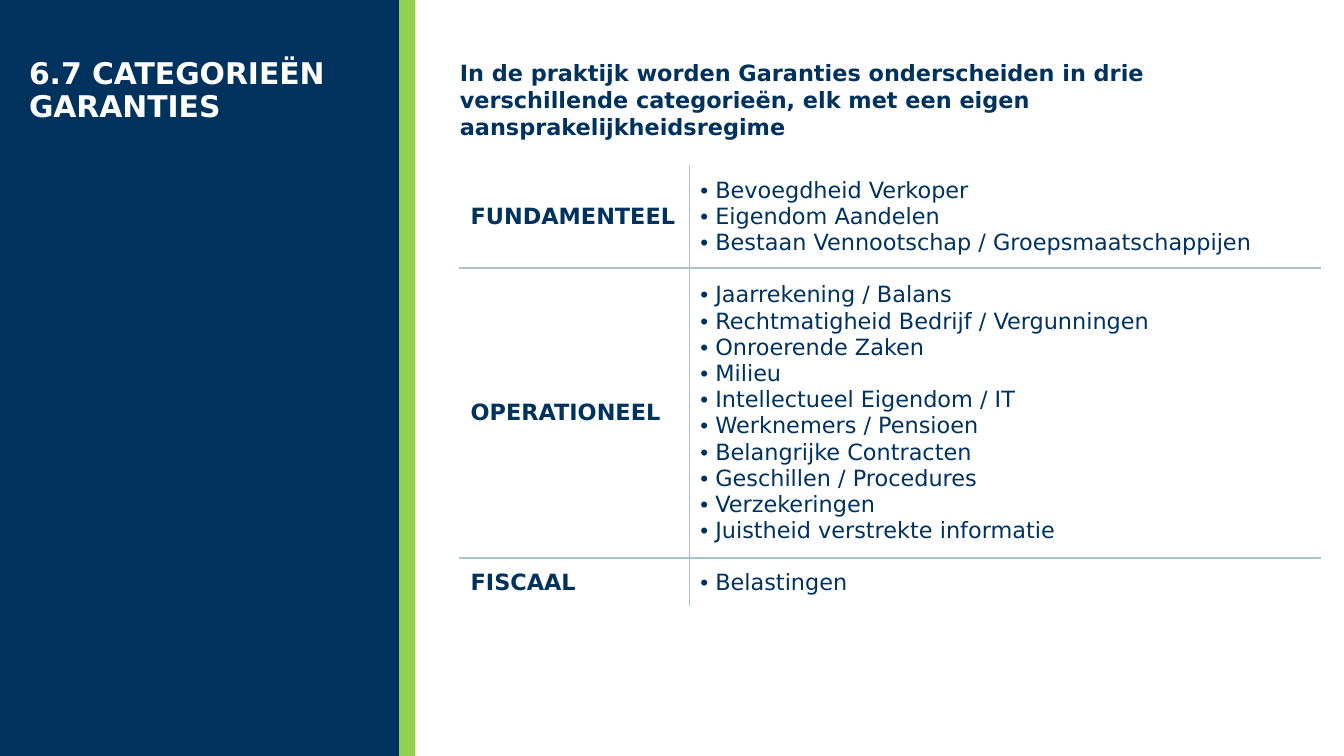
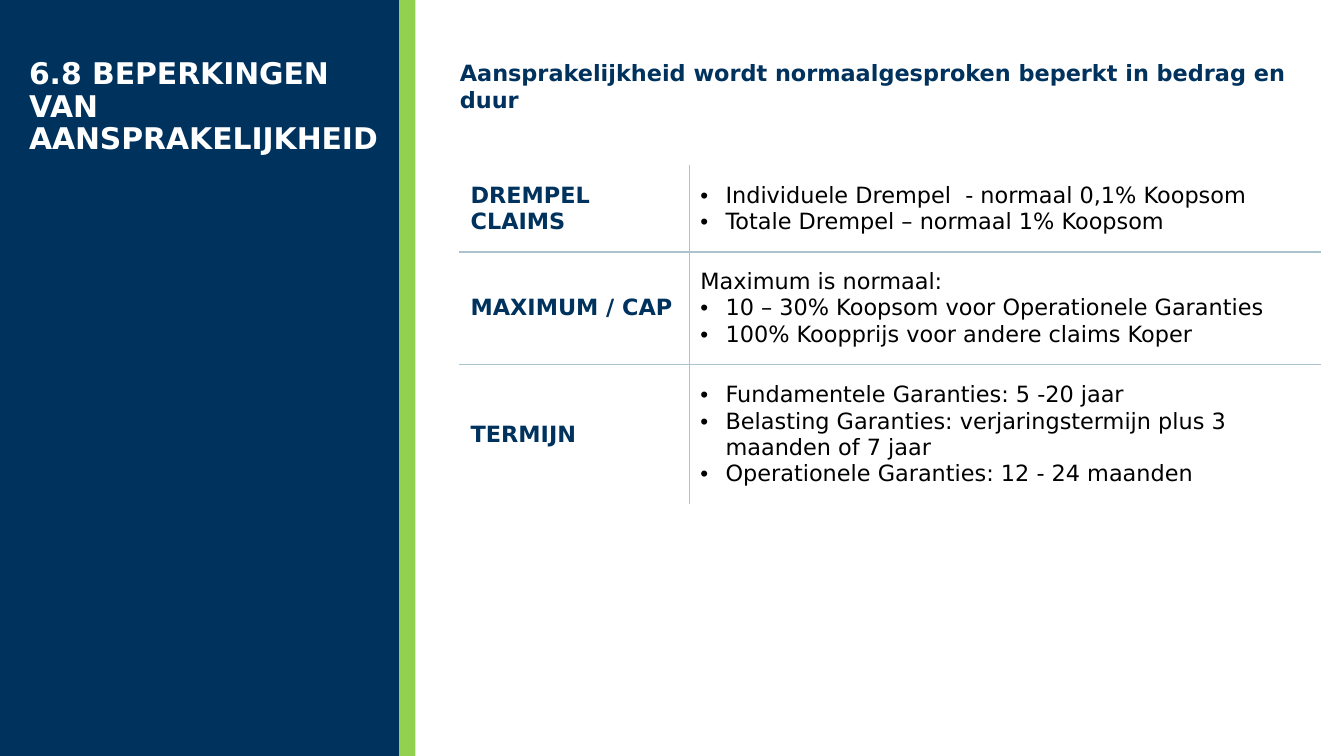
from lxml.etree import SubElement
from pptx import Presentation
from pptx.dml.color import RGBColor
from pptx.enum.shapes import MSO_SHAPE
from pptx.enum.text import MSO_ANCHOR
from pptx.oxml.ns import qn
from pptx.util import Pt

COLORS = {"navy": "00325E", "green": "92D050", "line": "ABC3CE",
          "white": "FFFFFF", "black": "000000"}
BANDS = [(0, 214, "navy"), (214, 8.6, "green")]
TITLE = {"size": Pt(16), "bold": True, "name": "DejaVu Sans"}
HEADING = {"size": Pt(12), "bold": True, "name": "DejaVu Sans"}
BODY = {"size": Pt(12), "bold": False, "name": "DejaVu Sans"}
CONTENT_LEFT, CONTENT_TOP, CONTENT_WIDTH = 246.4, 31.7, 460.8
TABLE_TOP = 88.8
COLUMN_WIDTHS = [123.1, 337.7]
CELL_LEFT = 5.76

SLIDES = [
    {"title": "6.7 CATEGORIEËN GARANTIES",
     "title_height": 34.6,
     "intro": "In de praktijk worden Garanties onderscheiden in drie verschillende "
              "categorieën, elk met een eigen aansprakelijkheidsregime",
     "color": "navy", "indent": 8, "padding": 5.76,
     "row_heights": [53.5, 151.6, 25.6],
     "rows": [
         ("FUNDAMENTEEL", None,
          ["Bevoegdheid Verkoper", "Eigendom Aandelen",
           "Bestaan Vennootschap / Groepsmaatschappijen"]),
         ("OPERATIONEEL", None,
          ["Jaarrekening / Balans", "Rechtmatigheid Bedrijf / Vergunningen",
           "Onroerende Zaken", "Milieu", "Intellectueel Eigendom / IT",
           "Werknemers / Pensioen", "Belangrijke Contracten",
           "Geschillen / Procedures", "Verzekeringen",
           "Juistheid verstrekte informatie"]),
         ("FISCAAL", None, ["Belastingen"])]},
    {"title": "6.8 BEPERKINGEN VAN AANSPRAKELIJKHEID",
     "title_height": 52.6,
     "intro": "Aansprakelijkheid wordt normaalgesproken beperkt in bedrag en duur",
     "color": "black", "indent": 13.5, "padding": 8.64,
     "row_heights": [45, 59.4, 73],
     "rows": [
         ("DREMPEL CLAIMS", None,
          ["Individuele Drempel  - normaal 0,1% Koopsom",
           "Totale Drempel – normaal 1% Koopsom"]),
         ("MAXIMUM / CAP", "Maximum is normaal:",
          ["10 – 30% Koopsom voor Operationele Garanties",
           "100% Koopprijs voor andere claims Koper"]),
         ("TERMIJN", None,
          ["Fundamentele Garanties: 5 -20 jaar",
           "Belasting Garanties: verjaringstermijn plus 3 maanden of 7 jaar",
           "Operationele Garanties: 12 - 24 maanden"])]},
]


def write(tf, text, style, color, indent=0):
    """Fill the empty first paragraph or add one; an indent makes it a bullet."""
    p = tf.paragraphs[0] if not tf.text else tf.add_paragraph()
    if indent:
        pPr = p._p.get_or_add_pPr()
        pPr.set("marL", str(Pt(indent)))
        pPr.set("indent", str(-Pt(indent)))
        SubElement(pPr, qn("a:buFont"), typeface="Arial")
        SubElement(pPr, qn("a:buChar"), char="•")
    r = p.add_run()
    r.text = text
    for key, value in style.items():
        setattr(r.font, key, value)
    r.font.color.rgb = RGBColor.from_string(COLORS[color])
    return p


def format_cell(cell, sides, padding):
    """Draw lines on the given sides, clear the fill and set the margins."""
    tcPr = cell._tc.get_or_add_tcPr()
    for side in sides:
        ln = SubElement(tcPr, qn("a:ln" + side), w=str(Pt(1)))
        fill = SubElement(ln, qn("a:solidFill"))
        SubElement(fill, qn("a:srgbClr"), val=COLORS["line"])
    cell.fill.background()
    cell.vertical_anchor = MSO_ANCHOR.MIDDLE
    cell.margin_left, cell.margin_right = Pt(CELL_LEFT), 0
    cell.margin_top = cell.margin_bottom = Pt(padding)


prs = Presentation()
prs.slide_width, prs.slide_height = Pt(720), Pt(405)

for content in SLIDES:
    s = prs.slides.add_slide(prs.slide_layouts[6])

    for left, width, color in BANDS:
        sp = s.shapes.add_shape(MSO_SHAPE.RECTANGLE, Pt(left), 0, Pt(width), prs.slide_height)
        sp.shadow.inherit = False
        sp.fill.solid()
        sp.fill.fore_color.rgb = RGBColor.from_string(COLORS[color])
        sp.line.fill.background()

    texts = [
        (CONTENT_LEFT, CONTENT_WIDTH, 350, content["intro"], HEADING, "navy", 1),
        (15.6, 199.4, content["title_height"], content["title"], TITLE, "white", 0.9)]
    for left, width, height, text, style, color, spacing in texts:
        sp = s.shapes.add_textbox(Pt(left), Pt(CONTENT_TOP), Pt(width), Pt(height))
        tf = sp.text_frame
        tf.word_wrap = True
        tf.margin_left = tf.margin_right = tf.margin_top = tf.margin_bottom = 0
        write(tf, text, style, color).line_spacing = spacing

    rows, heights = content["rows"], content["row_heights"]
    table = s.shapes.add_table(len(rows), 2, Pt(CONTENT_LEFT), Pt(TABLE_TOP),
                               Pt(CONTENT_WIDTH), Pt(sum(heights))).table
    table.first_row = table.horz_banding = False
    for column, width in zip(table.columns, COLUMN_WIDTHS):
        column.width = Pt(width)
    for i, (label, lead, bullets) in enumerate(rows):
        table.rows[i].height = Pt(heights[i])
        row_sides = ["T"] * (i > 0) + ["B"] * (i < len(rows) - 1)
        label_cell, list_cell = table.cell(i, 0), table.cell(i, 1)
        format_cell(label_cell, ["R"] + row_sides, 0)
        format_cell(list_cell, ["L"] + row_sides, content["padding"])
        write(label_cell.text_frame, label, HEADING, "navy")
        if lead:
            write(list_cell.text_frame, lead, BODY, content["color"])
        for bullet in bullets:
            write(list_cell.text_frame, bullet, BODY, content["color"], content["indent"])

prs.save("out.pptx")
